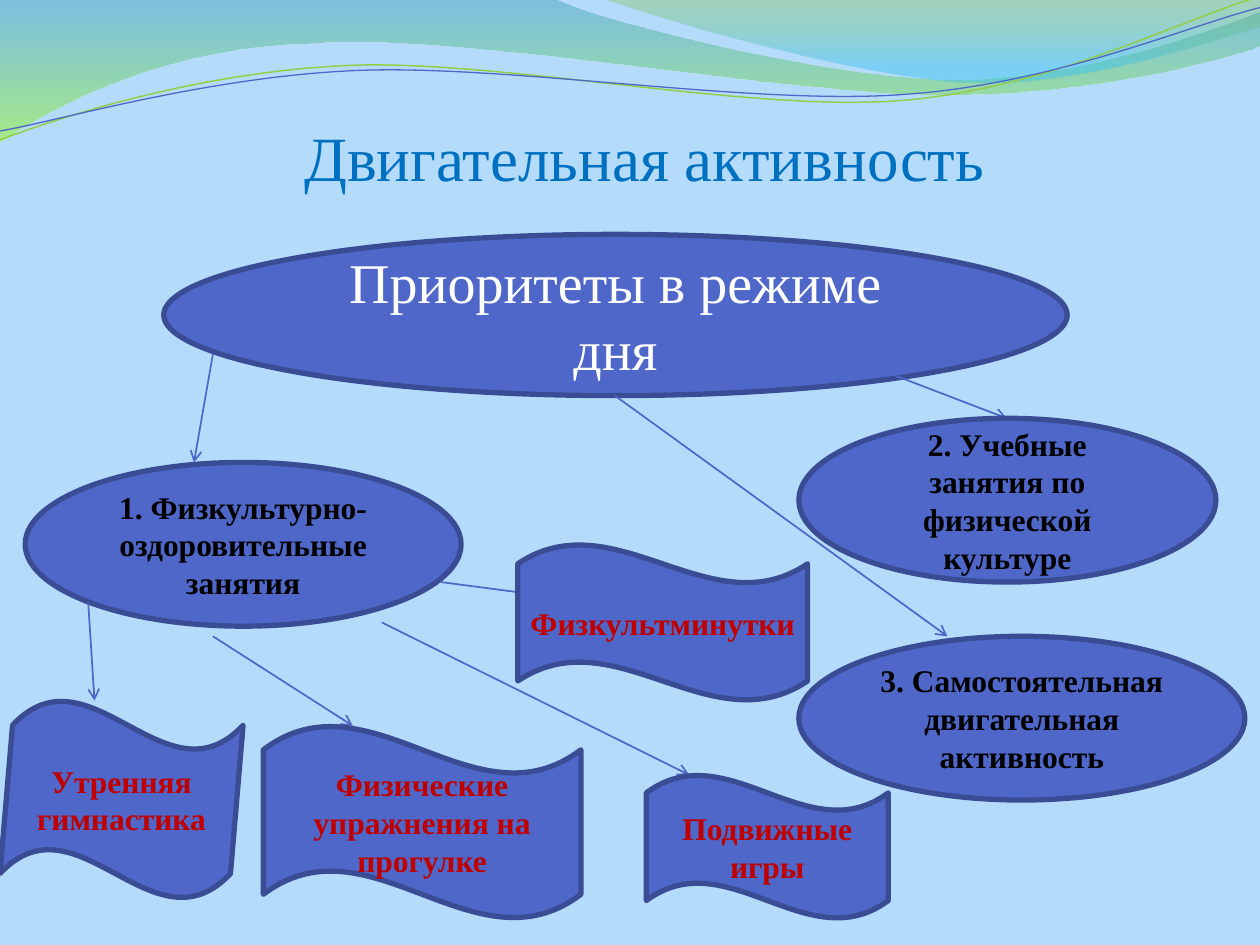
from lxml.etree import SubElement
from pptx import Presentation
from pptx.dml.color import RGBColor
from pptx.enum.shapes import MSO_CONNECTOR as LINK, MSO_SHAPE as FORM
from pptx.enum.text import MSO_ANCHOR as ANCHOR, MSO_AUTO_SIZE as AUTOSIZE, PP_ALIGN as ALIGN
from pptx.oxml.ns import qn
from pptx.util import Pt

PX = 9144  # 100 px to the inch
FONT = "Times New Roman"
BLUE, EDGE, WHITE, BLACK, RED = "4E67C8", "3A4C94", "FFFFFF", "000000", "C00000"
color = RGBColor.from_string


def write(frame, text, size, ink, bold=False):
    paragraph = frame.paragraphs[0]
    paragraph.alignment = ALIGN.CENTER
    run = paragraph.add_run()
    run.text = text
    run.font.name, run.font.size, run.font.bold = FONT, Pt(size), bold
    run.font.color.rgb = color(ink)


def draw_outline(shapes, start, steps, close):
    """Steps are points (x, y) or Bezier curves (x1, y1, x2, y2, x, y)."""
    ends = [step[-2:] for step in steps]
    left, top = (min(values) for values in zip(start, *ends))
    builder = shapes.build_freeform(*start, scale=PX)
    builder.add_line_segments(ends, close=close)
    outline = builder.convert_to_shape()
    outline.shadow.inherit = False
    # Turn the segments that have control points into curves
    segments = list(outline._element.iter(qn("a:lnTo")))
    for segment, step in zip(segments, steps):
        if len(step) == 6:
            curve = SubElement(segment.getparent(), qn("a:cubicBezTo"))
            for x, y in zip(step[::2], step[1::2]):
                SubElement(curve, qn("a:pt"), x=str(x - left), y=str(y - top))
            segment.getparent().replace(segment, curve)
    return outline


deck = Presentation()
deck.slide_width, deck.slide_height = 1000 * PX, 750 * PX
slide = deck.slides.add_slide(deck.slide_layouts[5])
shapes = slide.shapes
slide.background.fill.solid()
slide.background.fill.fore_color.rgb = color("B4DCFA")

# Gradient swooshes: start, steps, stops (position, colour, opacity %)
swooshes = [
    ((0, 0),
     [(440, -1), (476, 17, 664, 63, 758, 63), (853, 63, 958, 26, 1000, 9), (1001, 36),
      (983, 44, 870, 76, 746, 75), (622, 75, 382, 28, 257, 34), (129, 36, 46, 83, -1, 113)],
     [(0, "3B9CBF", 45), (1, "9CFA24", 55)]),
    ((479, -1),
     [(509, 11, 682, 62, 769, 65), (856, 69, 961, 32, 1000, 21), (1000, 0)],
     [(0, "7EBE2C", 30), (0.8, "39C1F1", 45)]),
]
for start, steps, stops in swooshes:
    swoosh = draw_outline(shapes, start, steps, True)
    swoosh.line.fill.background()
    swoosh.fill.gradient()
    swoosh.fill.gradient_angle = 270
    for stop, (position, tint, _) in zip(swoosh.fill.gradient_stops, stops):
        stop.position = position
        stop.color.rgb = color(tint)
    for tint, (_, _, opacity) in zip(swoosh._element.spPr.iter(qn("a:srgbClr")), stops):
        SubElement(tint, qn("a:alpha"), val=str(opacity * 1000))

# Thin wavy lines
strands = [
    ((0, 111), [(48, 93, 158, 57, 277, 52), (395, 47, 593, 89, 713, 80),
                (833, 71, 938, 15, 998, -2)], "93CE48", 0.85),
    ((0, 104), [(47, 96, 164, 61, 283, 56), (403, 51, 597, 84, 717, 75),
                (836, 67, 941, 21, 1000, 6)], BLUE, 0.75),
]
for start, steps, tint, width in strands:
    strand = draw_outline(shapes, start, steps, False)
    strand.fill.background()
    strand.line.color.rgb = color(tint)
    strand.line.width = Pt(width)

# Title, in front of the swooshes
title = shapes.title
title.left, title.top, title.width, title.height = 43 * PX, 44 * PX, 937 * PX, 110 * PX
heading = title.text_frame
heading.auto_size = AUTOSIZE.NONE
heading.word_wrap = True
heading.vertical_anchor = ANCHOR.BOTTOM
heading.margin_left = heading.margin_right = heading.margin_bottom = 0
heading.margin_top = 5 * PX
write(heading, "Двигательная активность", 36, "0070C0")
shapes._spTree.append(title._element)

# Scheme: form, box, text, size, ink, arrow that leads to it
nodes = [
    (FORM.OVAL, (130, 186, 717, 128), "Приоритеты в режиме дня", 32, WHITE, None),
    (FORM.OVAL, (20, 367, 346, 130), "1. Физкультурно-оздоровительные занятия", 18, BLACK,
     (169, 281, 154, 367)),
    (FORM.OVAL, (634, 332, 331, 130), "2. Учебные занятия по физической культуре", 18, BLACK,
     (705, 296, 799, 332)),
    (FORM.OVAL, (634, 505, 354, 130), "3. Самостоятельная двигательная активность", 18, BLACK,
     (488, 314, 752, 505)),
    (FORM.WAVE, (0, 556, 193, 157), "Утренняя гимнастика", 18, RED, (70, 478, 75, 556)),
    (FORM.WAVE, (411, 432, 230, 124), "Физкультминутки", 18, RED, (350, 462, 472, 478)),
    (FORM.WAVE, (209, 576, 252, 153), "Физические упражнения на прогулке", 18, RED,
     (169, 505, 280, 576)),
    (FORM.WAVE, (513, 615, 192, 114), "Подвижные игры", 18, RED, (303, 494, 547, 615)),
]
for form, box, text, size, ink, ends in nodes:
    if ends:
        arrow = shapes.add_connector(LINK.STRAIGHT, *(end * PX for end in ends))
        arrow.line.color.rgb = color(BLUE)
        arrow.line.width = Pt(1)
        SubElement(arrow.line._get_or_add_ln(), qn("a:tailEnd"), type="arrow")
        SubElement(arrow._element.spPr, qn("a:effectLst"))
    node = shapes.add_shape(form, *(length * PX for length in box))
    node.shadow.inherit = False
    node.fill.solid()
    node.fill.fore_color.rgb = color(BLUE)
    node.line.color.rgb = color(EDGE)
    node.line.width = Pt(3)
    if text == "Утренняя гимнастика":
        node.adjustments[1] = -0.026  # slanted sides
    node.text_frame.word_wrap = True
    node.text_frame.vertical_anchor = ANCHOR.MIDDLE
    write(node.text_frame, text, size, ink, bold=ink != WHITE)

deck.save("out.pptx")
